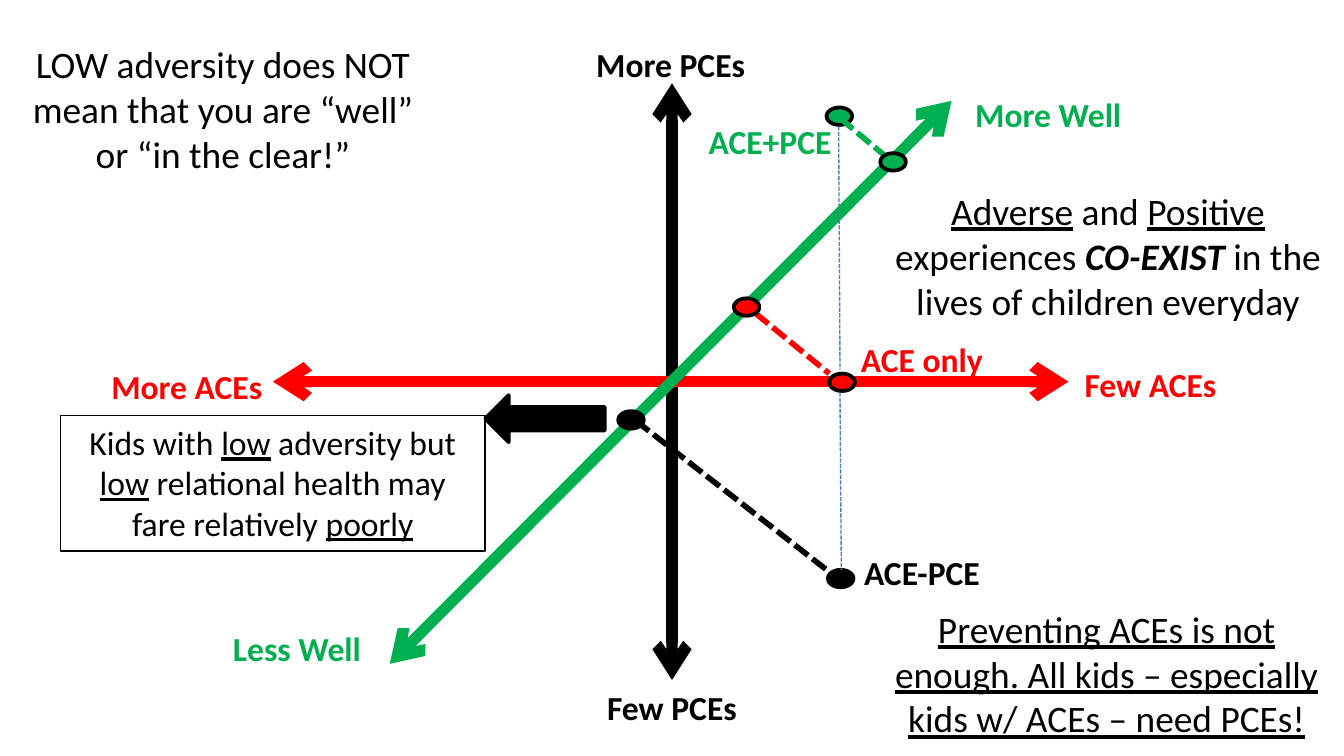
from lxml import etree
from pptx import Presentation
from pptx.dml.color import RGBColor
from pptx.enum.dml import MSO_LINE
from pptx.enum.shapes import MSO_CONNECTOR, MSO_SHAPE
from pptx.enum.text import MSO_ANCHOR, MSO_AUTO_SIZE, PP_ALIGN
from pptx.oxml.ns import qn
from pptx.util import Inches, Pt

STRAIGHT = MSO_CONNECTOR.STRAIGHT
DASH = MSO_LINE.SQUARE_DOT  # written as sysDash
OVAL, RECTANGLE, ARROW = MSO_SHAPE.OVAL, MSO_SHAPE.RECTANGLE, MSO_SHAPE.RIGHT_ARROW
CENTER, TOP = PP_ALIGN.CENTER, MSO_ANCHOR.TOP
GROW = MSO_AUTO_SIZE.SHAPE_TO_FIT_TEXT

COLORS = {"black": "000000", "red": "FF0000", "green": "00B050", "blue": "4B7EBC"}
FONT = "Calibri"
SLIDE_WIDTH = Inches(10)
SLIDE_HEIGHT = SLIDE_WIDTH * 9 // 16
DOT_SIZE = (0.19, 0.13)
BOLD = {"bold": True}
UNDERLINE = {"underline": True}

AXES = [
    ("black", (5, 0.62), (5, 5.06)),
    ("red", (2.03, 2.84), (7.95, 2.84)),
    ("green", (7.08, 0.75), (2.9, 4.94)),
]
# text, colour, left, top, width
LABELS = [
    ("Few PCEs", "black", 4.11, 5.06, 1.78),
    ("More PCEs", "black", 4.1, 0.28, 1.78),
    ("Few ACEs", "red", 7.67, 2.66, 1.78),
    ("More ACEs", "red", 0.5, 2.67, 1.78),
    ("Less Well", "green", 1.32, 4.62, 1.78),
    ("More Well", "green", 6.91, 0.65, 1.78),
    ("ACE only", "red", 6.26, 2.47, 1.2),
    ("ACE-PCE", "black", 6.26, 4.06, 1.2),
    ("ACE+PCE", "green", 5.13, 0.85, 1.2),
]
# colour, child's dot, dash start, dash end, dot on the wellness axis
PROJECTIONS = [
    ("green", (6.15, 0.8), (6.25, 0.88), (6.67, 1.23), (6.55, 1.14)),
    ("red", (6.17, 2.78), (5.62, 2.33), (6.17, 2.78), (5.46, 2.22)),
    ("black", (6.16, 4.24), (4.73, 3.13), (6.15, 4.24), (4.6, 3.06)),
]
GUIDES = [((6.25, 2.92), (6.26, 4.24)), ((6.24, 0.94), (6.25, 2.75))]
# box, runs of (text, format)
NOTES = [
    ((0.08, 0.26, 3.16, 1.11), [
        ("LOW adversity does NOT mean that you are “well” or “in the clear!”", {})]),
    ((6.55, 4.46, 3.37, 1.11), [
        ("Preventing ACEs is not enough. All kids – especially kids w/ ACEs – need PCEs!",
         UNDERLINE)]),
    ((6.56, 1.35, 3.37, 1.11), [
        ("Adverse", UNDERLINE), (" and ", {}), ("Positive", UNDERLINE),
        (" experiences ", {}), ("CO-EXIST", {"bold": True, "italic": True}),
        (" in the lives of children everyday", {})]),
]
CALLOUT_BOX = (0.45, 3.09, 3.16, 1.01)
CALLOUT_RUNS = [
    ("Kids with ", {}), ("low", UNDERLINE), (" adversity but ", {}),
    ("low", UNDERLINE), (" relational health may fare relatively ", {}),
    ("poorly", UNDERLINE),
]


def rgb(color):
    return RGBColor.from_string(COLORS[color])


def inches(values):
    return [Inches(value) for value in values]


def add_line(slide, start, end, color, width, dashed=False, arrows=False):
    connector = slide.shapes.add_connector(STRAIGHT, *inches(start + end))
    connector.line.color.rgb = rgb(color)
    connector.line.width = Pt(width)
    if dashed:
        connector.line.dash_style = DASH
    properties = connector._element.spPr
    if arrows:
        for tag in ("a:headEnd", "a:tailEnd"):
            etree.SubElement(properties.find(qn("a:ln")), qn(tag), type="arrow")
    etree.SubElement(properties, qn("a:effectLst"))


def add_shape(slide, kind, box, fill=None, line_width=2):
    shape = slide.shapes.add_shape(kind, *inches(box))
    shape.shadow.inherit = False
    if fill:
        shape.fill.solid()
        shape.fill.fore_color.rgb = rgb(fill)
    else:
        shape.fill.background()
    shape.line.color.rgb = rgb("black")
    shape.line.width = Pt(line_width)
    return shape


def write_runs(shape, runs, size, color="black"):
    frame_format = {"word_wrap": True, "auto_size": GROW, "vertical_anchor": TOP}
    for name, value in frame_format.items():
        setattr(shape.text_frame, name, value)
    paragraph = shape.text_frame.paragraphs[0]
    paragraph.alignment = CENTER
    for text, run_format in runs:
        run = paragraph.add_run()
        run.text = text
        run.font.color.rgb = rgb(color)
        for name, value in {"name": FONT, "size": Pt(size), **run_format}.items():
            setattr(run.font, name, value)


def add_text(slide, box, runs, size, color="black"):
    write_runs(slide.shapes.add_textbox(*inches(box)), runs, size, color)


def add_projection(slide, color, child, start, end, wellness):
    """Draw a child's dot, its dot on the wellness axis and the dash between."""
    add_shape(slide, OVAL, child + DOT_SIZE, color)
    add_line(slide, start, end, color, 3, dashed=True)
    add_shape(slide, OVAL, wellness + DOT_SIZE, color)


def add_callout(slide):
    callout = add_shape(slide, RECTANGLE, CALLOUT_BOX, line_width=0.75)
    write_runs(callout, CALLOUT_RUNS, 18)
    pointer = add_shape(slide, ARROW, (3.61, 2.94, 0.89, 0.35), "black")
    pointer.rotation = 180


def main():
    presentation = Presentation()
    presentation.slide_width = SLIDE_WIDTH
    presentation.slide_height = SLIDE_HEIGHT
    slide = presentation.slides.add_slide(presentation.slide_layouts[6])

    for color, start, end in AXES:
        add_line(slide, start, end, color, 6, arrows=True)
    for text, color, left, top, width in LABELS:
        add_text(slide, (left, top, width, 0.4), [(text, BOLD)], 18, color)
    for projection in PROJECTIONS:
        add_projection(slide, *projection)
    for start, end in GUIDES:
        add_line(slide, start, end, "blue", 0.75, dashed=True)
    for box, runs in NOTES:
        add_text(slide, box, runs, 20)
    add_callout(slide)

    presentation.save("out.pptx")


if __name__ == "__main__":
    main()
